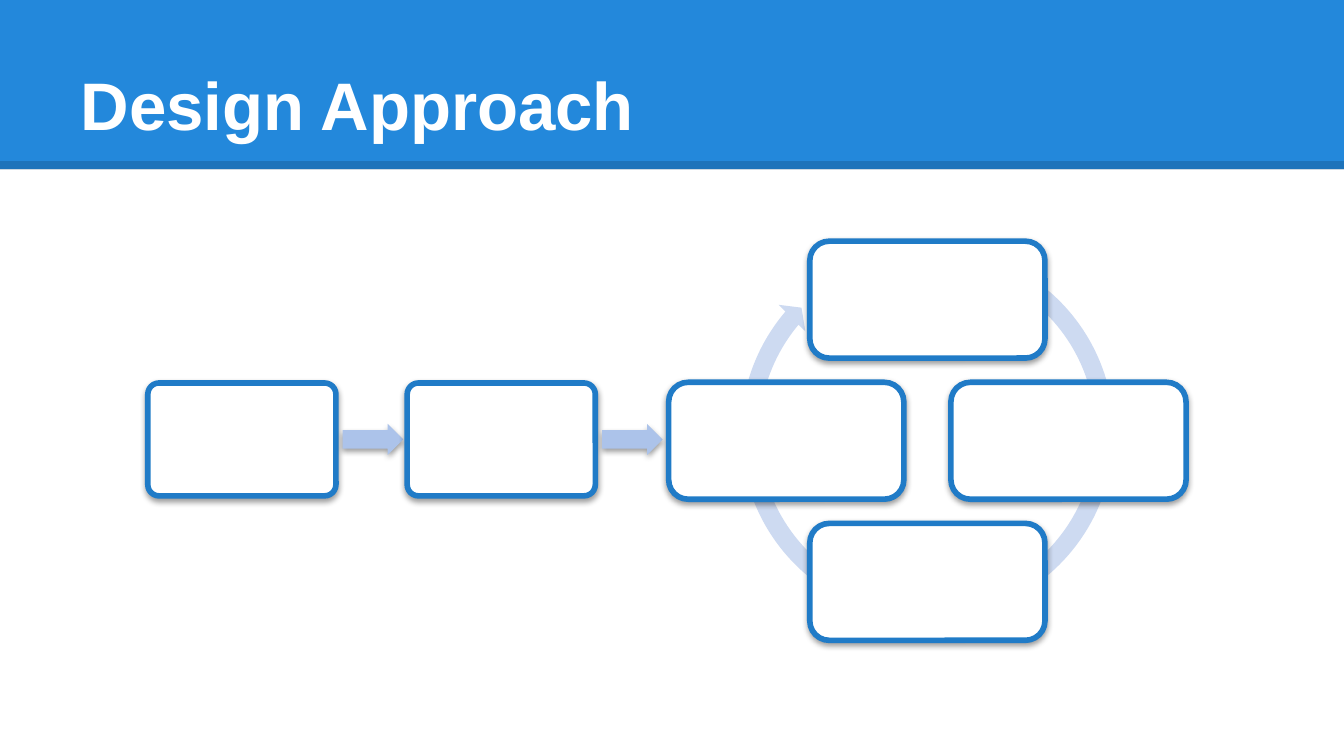
import pptx
import pptx.util
import pptx.dml.color
import pptx.enum.shapes
import pptx.enum.text
import pptx.oxml

Inches, Pt = pptx.util.Inches, pptx.util.Pt
RGB = pptx.dml.color.RGBColor.from_string
KIND = pptx.enum.shapes.MSO_SHAPE
TEXT = pptx.enum.text
NS = 'xmlns:a="http://schemas.openxmlformats.org/drawingml/2006/main"'

TITLE = "Design Approach"
STEPS = 2
CYCLE = [(0, -1), (1, 0), (0, 1), (-1, 0)]

THEME = {
    "band": "2388DB", "rule": "000000", "paper": "FFFFFF", "edge": "207BC7",
    "arrow": "ACC3EA", "ring": "CDDAF1",
    "font": {"name": "Arial", "size": Pt(36), "bold": True},
    "edge_w": Pt(3), "rule_w": Pt(4.5),
}
WIDE = Inches(10)
PAGE = {"slide_width": WIDE, "slide_height": WIDE * 9 // 16}
FRAME = {
    "word_wrap": True, "auto_size": TEXT.MSO_AUTO_SIZE.NONE,
    "vertical_anchor": TEXT.MSO_ANCHOR.BOTTOM,
    "margin_left": Inches(0.1), "margin_right": Inches(0.1),
    "margin_top": Inches(0.1), "margin_bottom": Inches(0.1),
}
PLACE = {"left": Inches(0.5), "top": Inches(0.23),
         "width": Inches(9), "height": Inches(0.94)}

MID = 3.27
STEP = {"left": 1.1, "pitch": 1.93, "size": (1.4, 0.84)}
ARROW = {"left": 2.55, "size": (0.45, 0.23)}
HUB, CORE, REACH, CARD = 6.9, 3.28, 1.05, (1.75, 0.87)
RING, RING_MID = 2.92, 3.22

SHADOW = (f'<a:effectLst {NS}><a:outerShdw blurRad="40000" dist="20000" '
          'dir="5400000" rotWithShape="0"><a:srgbClr val="000000">'
          '<a:alpha val="38000"/></a:srgbClr></a:outerShdw></a:effectLst>')


def apply(item, values):
    for name, value in values.items():
        setattr(item, name, value)


def draw(slide, kind, mid, size, fill, edge=None, adjust=(), shade=False):
    (x, y), (w, h) = mid, size
    shape = slide.shapes.add_shape(kind, Inches(x - w / 2), Inches(y - h / 2),
                                   Inches(w), Inches(h))
    for i, value in enumerate(adjust):
        shape.adjustments[i] = value
    shape.fill.solid()
    shape.fill.fore_color.rgb = RGB(THEME[fill])
    if edge:
        shape.line.color.rgb = RGB(THEME[edge])
        shape.line.width = THEME["edge_w"]
    else:
        shape.line.fill.background()
    if shade:
        shape.element.spPr.append(pptx.oxml.parse_xml(SHADOW))
    else:
        shape.shadow.inherit = False
    return shape


def header(slide):
    title = slide.shapes.title
    band = draw(slide, KIND.RECTANGLE, (5, 0.63), (10, 1.26), "band")
    rule = slide.shapes.add_connector(
        pptx.enum.shapes.MSO_CONNECTOR.STRAIGHT,
        0, Inches(1.23), WIDE, Inches(1.23))
    rule.line.color.rgb = RGB(THEME["rule"])
    rule.line.width = THEME["rule_w"]
    tint = rule.element.spPr.find(".//{*}srgbClr")
    tint.append(pptx.oxml.parse_xml(f'<a:alpha {NS} val="15000"/>'))
    rule.element.spPr.append(pptx.oxml.parse_xml(f"<a:effectLst {NS}/>"))
    for part in (band, rule):
        title.element.addprevious(part.element)
    apply(title, PLACE)
    apply(title.text_frame, FRAME)
    line = title.text_frame.paragraphs[0]
    line.alignment = TEXT.PP_ALIGN.LEFT
    run = line.add_run()
    run.text = TITLE
    apply(run.font, THEME["font"])
    run.font.color.rgb = RGB(THEME["paper"])


def flow(slide):
    for i in range(STEPS):
        shift = i * STEP["pitch"]
        for kind, part, fill, edge, adjust in (
                (KIND.ROUNDED_RECTANGLE, STEP, "paper", "edge", [0.1]),
                (KIND.RIGHT_ARROW, ARROW, "arrow", None, [0.6, 0.5])):
            x = part["left"] + shift + part["size"][0] / 2
            draw(slide, kind, (x, MID), part["size"], fill, edge, adjust, True)


def cycle(slide):
    draw(slide, KIND.CIRCULAR_ARROW, (HUB, RING_MID), (RING, RING), "ring",
         adjust=[0.047, 2.729, 132.155, 177.748, 0.048])
    for dx, dy in CYCLE:
        draw(slide, KIND.ROUNDED_RECTANGLE,
             (HUB + dx * REACH, CORE + dy * REACH), CARD,
             "paper", "edge", shade=True)


def main():
    deck = pptx.Presentation()
    apply(deck, PAGE)
    slide = deck.slides.add_slide(deck.slide_layouts[5])
    header(slide)
    flow(slide)
    cycle(slide)
    deck.save("out.pptx")


if __name__ == "__main__":
    main()
